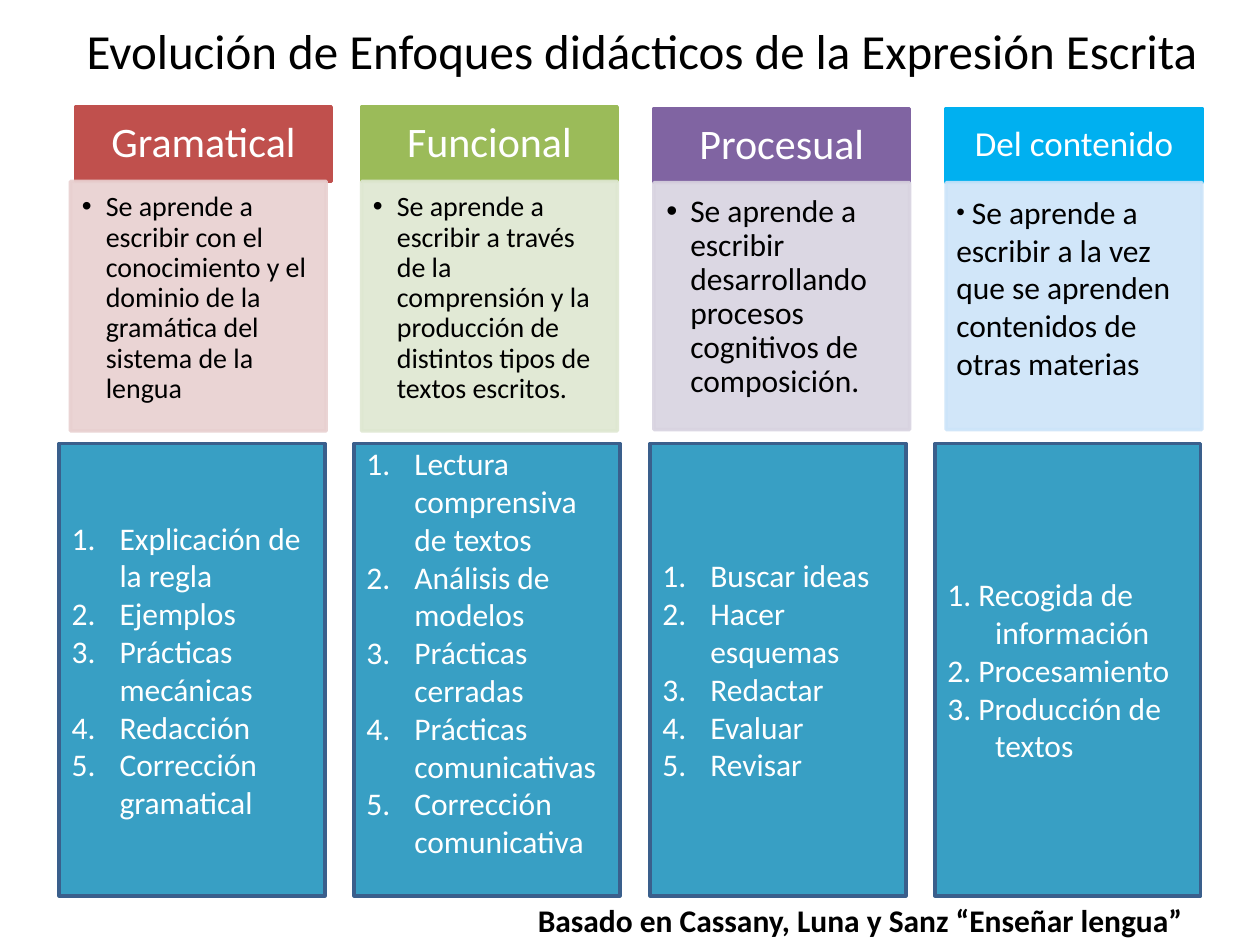
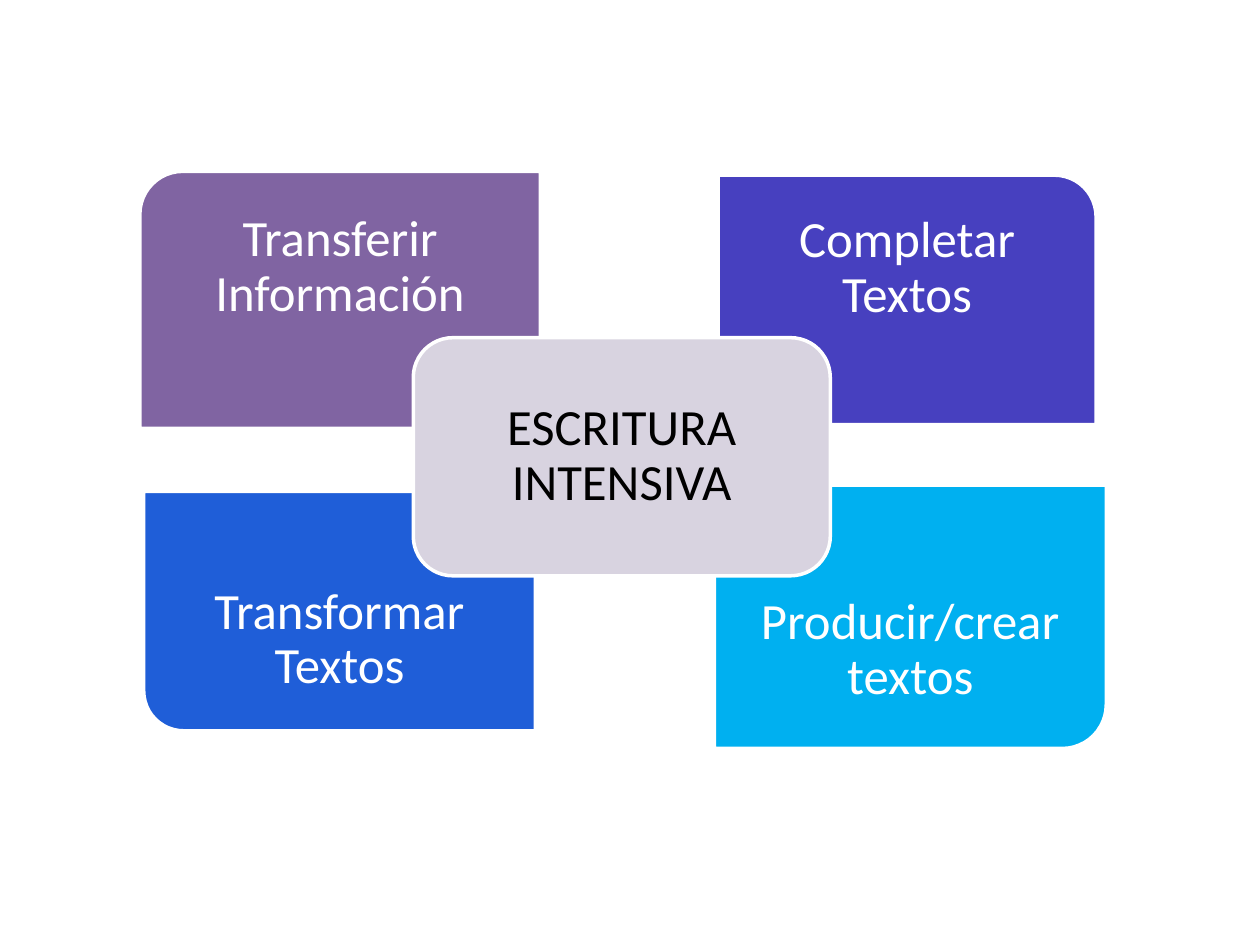
"""Build two slides on teaching approaches to writing and on intensive writing."""
from dataclasses import dataclass

from lxml import etree
from pptx import Presentation
from pptx.dml.color import RGBColor
from pptx.enum.shapes import MSO_SHAPE
from pptx.enum.text import MSO_ANCHOR, PP_ALIGN
from pptx.oxml.ns import qn
from pptx.util import Inches, Pt


@dataclass(frozen=True)
class Theme:
    font: str = "Calibri"
    black: str = "000000"
    white: str = "FFFFFF"
    red: str = "C0504D"
    green: str = "9BBB59"
    purple: str = "8064A2"
    sky: str = "00B0F0"
    indigo: str = "4740BF"
    blue: str = "1F5ED8"
    pale_red: str = "E8D0D0"
    pale_green: str = "DEE7D1"
    pale_purple: str = "D8D3E0"
    pale_sky: str = "CCE4F9"
    steps_fill: str = "0084B4"
    steps_line: str = "3A5F8C"
    title: int = 28
    heading: int = 24
    small_heading: int = 20
    body: int = 18
    small_body: int = 16
    hub: int = 29
    outline: int = 2


THEME = Theme()
TITLE = "Evolución de Enfoques didácticos de la Expresión Escrita"
SOURCE = "Basado en Cassany, Luna y Sanz “Enseñar lengua”"

HANGING = {"margin": 0.19, "bullet": ("buChar", {"char": "•"}), "line_spacing": 0.9}
INLINE = {"margin": 0, "bullet": ("buChar", {"char": "•"}), "bullet_scale": "78000"}
NUMBERED = {"margin": 0.38, "bullet": ("buAutoNum", {"type": "arabicPeriod"})}
TYPED = {"margin": 0.38}

APPROACHES = [
    {"name": "Gramatical", "name_size": THEME.heading, "colour": THEME.red, "pale": THEME.pale_red,
     "name_at": (0.6, 0.85), "idea_at": (0.56, 1.44, 2.03, 1.98),
     "idea": "Se aprende a escribir con el conocimiento y el dominio de la gramática del sistema de la lengua",
     "idea_size": THEME.small_body, "idea_style": HANGING, "idea_insets": (0.09, 0.09, 0.12, 0.14),
     "steps": ["Explicación de la regla", "Ejemplos", "Prácticas mecánicas", "Redacción",
               "Corrección gramatical"],
     "steps_style": NUMBERED, "steps_left": 0.47, "steps_width": 2.11, "steps_bottom": 0.05},
    {"name": "Funcional", "name_size": THEME.heading, "colour": THEME.green, "pale": THEME.pale_green,
     "name_at": (2.87, 0.85), "idea_at": (2.87, 1.44, 2.03, 1.98),
     "idea": "Se aprende a escribir a través de la comprensión y la producción de distintos tipos de "
             "textos escritos.",
     "idea_size": THEME.small_body, "idea_style": HANGING, "idea_insets": (0.09, 0.09, 0.12, 0.14),
     "steps": ["Lectura comprensiva de textos", "Análisis de modelos", "Prácticas cerradas",
               "Prácticas comunicativas", "Corrección comunicativa"],
     "steps_style": NUMBERED, "steps_left": 2.81, "steps_width": 2.11, "steps_bottom": 0.33},
    {"name": "Procesual", "name_size": THEME.heading, "colour": THEME.purple, "pale": THEME.pale_purple,
     "name_at": (5.19, 0.86), "idea_at": (5.19, 1.45, 2.03, 1.96),
     "idea": "Se aprende a escribir desarrollando procesos cognitivos de composición.",
     "idea_size": THEME.body, "idea_style": HANGING, "idea_insets": (0.1, 0.1, 0.14, 0.16),
     "steps": ["Buscar ideas", "Hacer esquemas", "Redactar", "Evaluar", "Revisar"],
     "steps_style": NUMBERED, "steps_left": 5.16, "steps_width": 2.03, "steps_bottom": 0.05},
    {"name": "Del contenido", "name_size": THEME.small_heading, "colour": THEME.sky,
     "pale": THEME.pale_sky, "name_at": (7.51, 0.86), "idea_at": (7.51, 1.45, 2.03, 1.96),
     "idea": " Se aprende a escribir a la vez que se aprenden contenidos de otras materias",
     "idea_size": THEME.body, "idea_style": INLINE, "idea_insets": (0.08, 0.08, 0.11, 0.12),
     "steps": ["1. Recogida de información", "2. Procesamiento", "3. Producción de textos"],
     "steps_style": TYPED, "steps_left": 7.42, "steps_width": 2.11, "steps_bottom": 0.05},
]

QUADRANTS = [
    ("Transferir Información", THEME.purple, (1.68, 0.79, 2.04, 3.18), 270, (1.11, 1.36, 3.18, 1.53)),
    ("Completar Textos", THEME.indigo, (5.7, 1.39, 3, 1.98), 0, (5.7, 1.39, 3, 1.48)),
    ("Transformar Textos", THEME.blue, (1.14, 3.9, 3.11, 1.9), 180, (1.14, 4.37, 3.11, 1.42)),
    ("Producir/crear textos", THEME.sky, (6.18, 3.34, 2.09, 3.11), 90, (5.67, 4.38, 3.11, 1.57)),
]
HUB = ("ESCRITURA INTENSIVA", (3.28, 2.68, 3.31, 1.89))


def set_alpha(fill_parent, percent):
    for colour in fill_parent.iterfind(f"{qn('a:solidFill')}/{qn('a:srgbClr')}"):
        etree.SubElement(colour, qn("a:alpha"), val=str(percent * 1000))


def add_block(slide, preset, at, fill, line, fill_alpha=100, line_alpha=100):
    block = slide.shapes.add_shape(preset, *map(Inches, at))
    block.shadow.inherit = False
    block.fill.solid()
    block.fill.fore_color.rgb = RGBColor.from_string(fill)
    block.line.color.rgb = RGBColor.from_string(line)
    block.line.width = Pt(THEME.outline)
    outline = block.line._get_or_add_ln()
    for part, alpha in ((block._element.spPr, fill_alpha), (outline, line_alpha)):
        if alpha < 100:
            set_alpha(part, alpha)
    return block


def style_list(paragraph, margin=None, bullet=None, bullet_scale=None, line_spacing=None):
    properties = paragraph._p.get_or_add_pPr()
    if margin is not None:
        properties.set("marL", str(Inches(margin)))
        properties.set("indent", str(-Inches(margin)))
    if bullet_scale:
        etree.SubElement(properties, qn("a:buSzPct"), val=bullet_scale)
    if bullet:
        tag, attributes = bullet
        if tag == "buChar":
            etree.SubElement(properties, qn("a:buFont"), typeface="Arial")
        etree.SubElement(properties, qn(f"a:{tag}"), attributes)
    if line_spacing:
        paragraph.line_spacing = line_spacing


def write(frame, lines, size, colour, align=PP_ALIGN.LEFT, anchor=MSO_ANCHOR.MIDDLE,
          insets=(0.1, 0.05, 0.1, 0.05), bold=False, style=None):
    sides = ("margin_left", "margin_top", "margin_right", "margin_bottom")
    frame_format = {"word_wrap": True, "vertical_anchor": anchor, **dict(zip(sides, map(Inches, insets)))}
    for attribute, value in frame_format.items():
        setattr(frame, attribute, value)
    for index, line in enumerate(lines):
        paragraph = frame.add_paragraph() if index else frame.paragraphs[0]
        paragraph.alignment = align
        style_list(paragraph, **(style or {}))
        run = paragraph.add_run()
        run.text = line
        for attribute, value in {"name": THEME.font, "size": Pt(size), "bold": bold}.items():
            setattr(run.font, attribute, value)
        run.font.color.rgb = RGBColor.from_string(colour)


def write_label(frame, text, size, colour, insets):
    write(frame, [text], size, colour, PP_ALIGN.CENTER, insets=insets, style={"line_spacing": 0.9})


def add_approach(slide, approach):
    heading = add_block(slide, MSO_SHAPE.RECTANGLE, (*approach["name_at"], 2.03, 0.59),
                        approach["colour"], approach["colour"])
    write_label(heading.text_frame, approach["name"], approach["name_size"], THEME.white,
                (0.16, 0.1, 0.16, 0.1))
    idea = add_block(slide, MSO_SHAPE.RECTANGLE, approach["idea_at"], approach["pale"],
                     approach["pale"], 90, 90)
    write(idea.text_frame, [approach["idea"]], approach["idea_size"], THEME.black,
          anchor=MSO_ANCHOR.TOP, insets=approach["idea_insets"], style=approach["idea_style"])
    steps = add_block(slide, MSO_SHAPE.RECTANGLE,
                      (approach["steps_left"], 3.52, approach["steps_width"], 3.59),
                      THEME.steps_fill, THEME.steps_line, 78)
    write(steps.text_frame, approach["steps"], THEME.body, THEME.white,
          insets=(0.1, 0.05, 0.1, approach["steps_bottom"]), style=approach["steps_style"])


def add_approaches_slide(deck):
    slide = deck.slides.add_slide(deck.slide_layouts[5])
    title = slide.shapes.title
    title.left, title.top, title.width, title.height = map(Inches, (0.39, -0.23, 9.41, 1.25))
    write(title.text_frame, [TITLE], THEME.title, THEME.black, PP_ALIGN.CENTER)
    for approach in APPROACHES:
        add_approach(slide, approach)
    source = slide.shapes.add_textbox(*map(Inches, (4.17, 7.1, 5.36, 0.4)))
    write(source.text_frame, [SOURCE], THEME.body, THEME.black, anchor=MSO_ANCHOR.TOP, bold=True)


def add_intensive_slide(deck):
    slide = deck.slides.add_slide(deck.slide_layouts[6])
    for text, colour, at, rotation, text_at in QUADRANTS:
        quadrant = add_block(slide, MSO_SHAPE.ROUND_1_RECTANGLE, at, colour, THEME.white)
        quadrant.rotation = rotation
        label = slide.shapes.add_textbox(*map(Inches, text_at))
        write_label(label.text_frame, text, THEME.hub, THEME.white, (0.23,) * 4)
    text, at = HUB
    hub = add_block(slide, MSO_SHAPE.ROUNDED_RECTANGLE, at, THEME.pale_purple, THEME.white)
    write_label(hub.text_frame, text, THEME.hub, THEME.black, (0.12,) * 4)


def main():
    deck = Presentation()
    deck.slide_width, deck.slide_height = Inches(10), Inches(7.5)
    add_approaches_slide(deck)
    add_intensive_slide(deck)
    deck.save("out.pptx")


if __name__ == "__main__":
    main()
